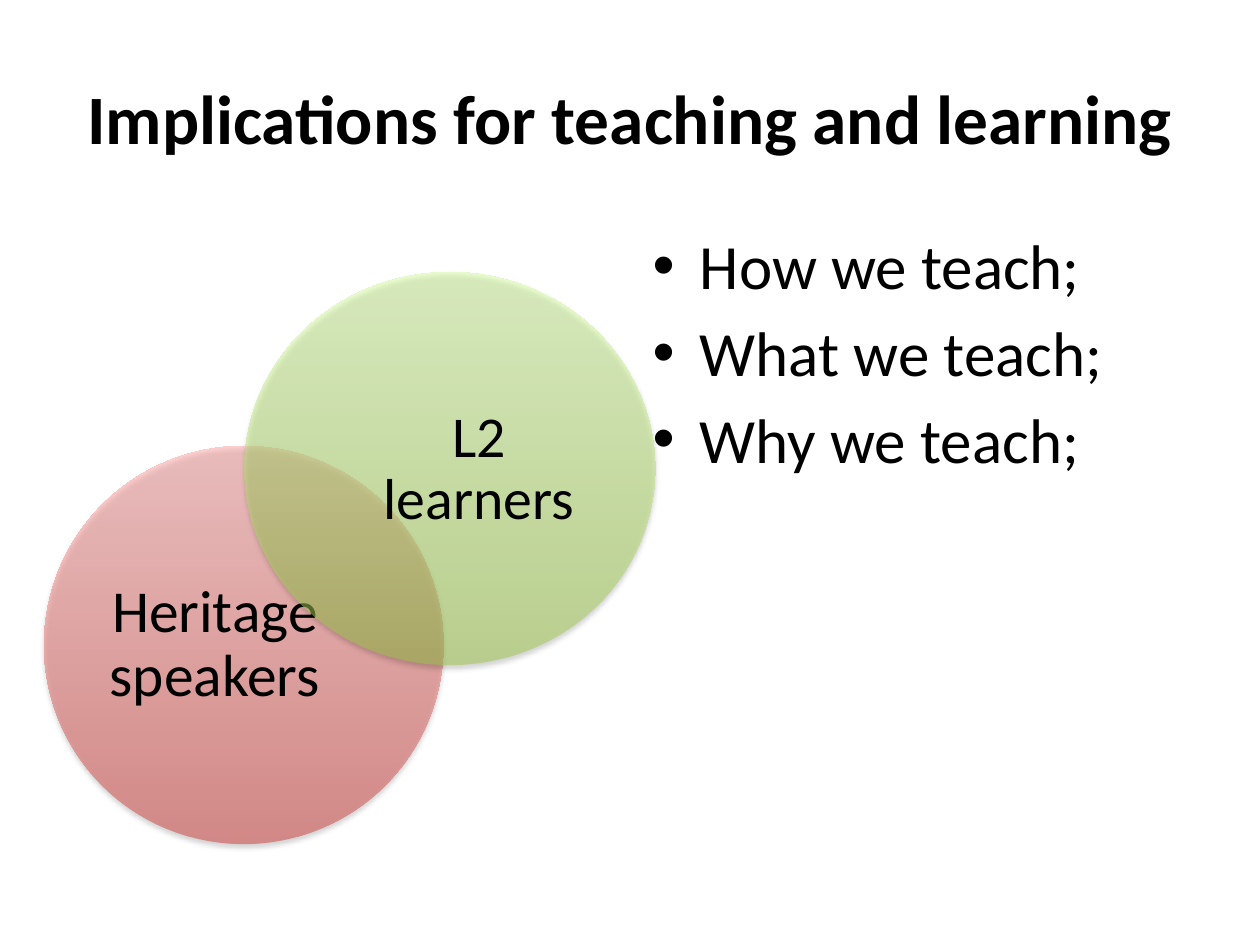
import pptx
import pptx.util
import pptx.dml.color
import pptx.enum.shapes
import pptx.enum.text
import pptx.oxml
from lxml import etree

Pt = pptx.util.Pt
RGBColor = pptx.dml.color.RGBColor
ALIGN = pptx.enum.text.PP_ALIGN
ANCHOR = pptx.enum.text.MSO_ANCHOR

BLACK = RGBColor(0x00, 0x00, 0x00)
RED_DARK = RGBColor(0xD1, 0x40, 0x3C)
RED_LIGHT = RGBColor(0xFF, 0xA6, 0xA5)
GREEN_DARK = RGBColor(0xA0, 0xCA, 0x4A)
GREEN_LIGHT = RGBColor(0xDA, 0xFF, 0xA5)

FONT = "Calibri"
NAMESPACE = "http://schemas.openxmlformats.org/drawingml/2006/main"

TITLE = "Implications for teaching and learning"
TITLE_AREA = (36, 21.6, 648, 90)
POINTS = ["How we teach;", "What we teach;", "Why we teach;"]
POINTS_AREA = (365.8, 126, 318.2, 356.4)
POINT_INDENT = 27
CIRCLES = [
    {"label": "Heritage speakers", "size": 34, "colors": (RED_DARK, RED_LIGHT),
     "area": (25.2, 254.9, 228.2, 227.5), "label_area": (56.9, 281.5, 131.8, 174.2)},
    {"label": "L2 learners", "size": 33, "colors": (GREEN_DARK, GREEN_LIGHT),
     "area": (139.7, 155.5, 234.7, 224.6), "label_area": (205.9, 182.2, 135.4, 172.1)},
]


def add_text(page, area, lines, size, align, anchor, bold=False, inset=None):
    box = page.shapes.add_textbox(*map(Pt, area))
    frame = box.text_frame
    frame.word_wrap = True
    frame.vertical_anchor = anchor
    if inset is not None:
        frame.margin_left = frame.margin_right = Pt(inset)
        frame.margin_top = frame.margin_bottom = Pt(inset)
    frame.text = "\n".join(lines)
    for para in frame.paragraphs:
        para.alignment = align
        for span in para.runs:
            span.font.name = FONT
            span.font.size = Pt(size)
            span.font.bold = bold
            span.font.color.rgb = BLACK
    return frame.paragraphs


def add_bullet(para):
    properties = para._p.get_or_add_pPr()
    properties.set("marL", str(Pt(POINT_INDENT)))
    properties.set("indent", str(-Pt(POINT_INDENT)))
    font = etree.SubElement(properties, f"{{{NAMESPACE}}}buFont")
    font.set("typeface", "Arial")
    bullet = etree.SubElement(properties, f"{{{NAMESPACE}}}buChar")
    bullet.set("char", "•")


def add_circle(page, area, colors):
    circle = page.shapes.add_shape(pptx.enum.shapes.MSO_SHAPE.OVAL, *map(Pt, area))
    circle.line.fill.background()
    stops = "".join(
        f'<a:gs pos="{position}"><a:srgbClr val="{color}"><a:alpha val="50000"/></a:srgbClr></a:gs>'
        for position, color in zip((0, 100000), colors))
    gradient = pptx.oxml.parse_xml(
        f'<a:gradFill xmlns:a="{NAMESPACE}" rotWithShape="1"><a:gsLst>{stops}</a:gsLst>'
        '<a:lin ang="16200000" scaled="0"/></a:gradFill>')
    shadow = pptx.oxml.parse_xml(
        f'<a:effectLst xmlns:a="{NAMESPACE}">'
        f'<a:outerShdw blurRad="{Pt(3.1)}" dist="{Pt(1.8)}" dir="5400000" rotWithShape="0">'
        f'<a:srgbClr val="{BLACK}"><a:alpha val="35000"/></a:srgbClr>'
        '</a:outerShdw></a:effectLst>')
    properties = circle._element.spPr
    properties.find(f"{{{NAMESPACE}}}prstGeom").addnext(gradient)
    properties.append(shadow)


def main():
    deck = pptx.Presentation()
    deck.slide_width, deck.slide_height = Pt(720), Pt(540)
    page = deck.slides.add_slide(deck.slide_layouts[6])

    add_text(page, TITLE_AREA, [TITLE], 39.6, ALIGN.CENTER, ANCHOR.MIDDLE, bold=True)
    for circle in CIRCLES:
        add_circle(page, circle["area"], circle["colors"])
        for para in add_text(page, circle["label_area"], [circle["label"]], circle["size"],
                             ALIGN.CENTER, ANCHOR.MIDDLE, inset=0):
            para.line_spacing = 0.9
    for para in add_text(page, POINTS_AREA, POINTS, 36, ALIGN.LEFT, ANCHOR.TOP):
        para.space_before = Pt(6.4)
        add_bullet(para)

    deck.save("out.pptx")


if __name__ == "__main__":
    main()
